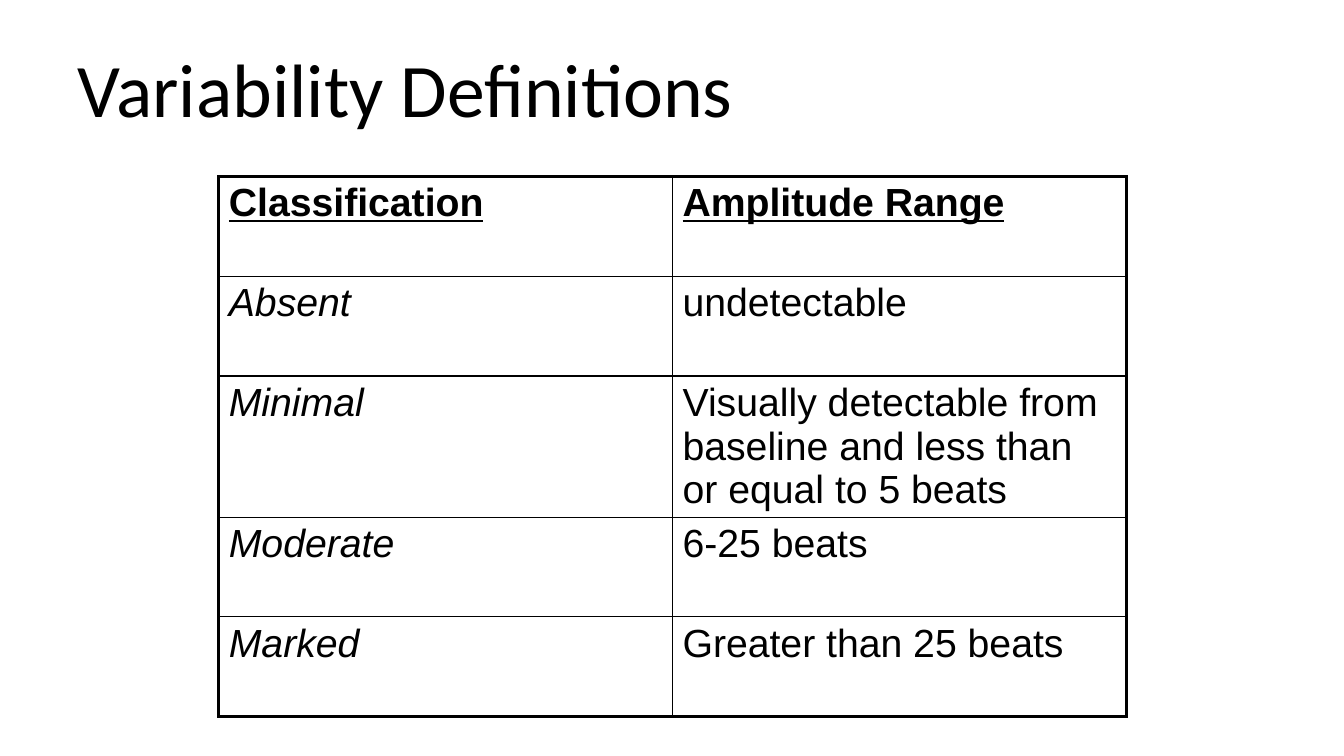
from lxml import etree
from pptx import Presentation
from pptx import util as u
from pptx.dml.color import RGBColor
from pptx.enum import text
from pptx.oxml.ns import qn

TITLE = "Variability Definitions"
DEFINITIONS = [
    ("Classification", "Amplitude Range"),
    ("Absent", "undetectable"),
    ("Minimal", "Visually detectable from baseline and less than or equal to 5 beats"),
    ("Moderate", "6-25 beats"),
    ("Marked", "Greater than 25 beats"),
]
BLACK = "000000"
TITLE_FONT = {"name": "Calibri", "size": u.Pt(54)}
BODY_FONT = {"name": "Arial", "size": u.Pt(28)}
HEADING = {"bold": True, "underline": True}
CLASS_NAME = {"bold": False, "italic": True}
AMPLITUDE = {"bold": False}
OUTER, INNER = 2.25, 1
COLUMN_WIDTH, ROW_HEIGHT = 4.5, 0.99


def color(hex_code):
    return RGBColor.from_string(hex_code)


def set_font(font, formats):
    for name, value in formats.items():
        setattr(font, name, value)
    font.color.rgb = color(BLACK)


def add_borders(cell, widths):
    """Draw cell borders from a dict of side letter to width in points."""
    properties = cell._tc.get_or_add_tcPr()
    for side, width in widths.items():
        line = etree.SubElement(properties, qn(f"a:ln{side}"), w=str(u.Pt(width)))
        fill = etree.SubElement(line, qn("a:solidFill"))
        etree.SubElement(fill, qn("a:srgbClr"), val=BLACK)


def add_title(slide):
    title = slide.shapes.title
    title.left, title.top = u.Inches(0.67), u.Inches(0.3)
    title.width, title.height = u.Inches(12), u.Inches(1.25)
    frame = title.text_frame
    frame.text = TITLE
    frame.vertical_anchor = text.MSO_ANCHOR.MIDDLE
    frame.auto_size = text.MSO_AUTO_SIZE.NONE
    paragraph = frame.paragraphs[0]
    paragraph.alignment = text.PP_ALIGN.LEFT
    paragraph.line_spacing = 0.9
    set_font(paragraph.runs[0].font, TITLE_FONT)


def add_definitions(slide):
    row_count, column_count = len(DEFINITIONS), len(DEFINITIONS[0])
    table = slide.shapes.add_table(
        row_count, column_count, u.Inches(2.17), u.Inches(1.75),
        u.Inches(COLUMN_WIDTH * column_count), u.Inches(ROW_HEIGHT * row_count),
    ).table
    table.horz_banding = False
    for r, definition in enumerate(DEFINITIONS):
        table.rows[r].height = u.Inches(ROW_HEIGHT)
        for c, wording in enumerate(definition):
            cell = table.cell(r, c)
            cell.text = wording
            style = HEADING if r == 0 else (CLASS_NAME, AMPLITUDE)[c]
            set_font(cell.text_frame.paragraphs[0].runs[0].font, BODY_FONT | style)
            on_edge = {"L": c == 0, "R": c == column_count - 1,
                       "T": r == 0, "B": r == row_count - 1}
            add_borders(cell, {side: OUTER if edge else INNER
                               for side, edge in on_edge.items()})
            cell.fill.background()


def main():
    deck = Presentation()
    deck.slide_width, deck.slide_height = u.Inches(13.33), u.Inches(7.5)
    slide = deck.slides.add_slide(deck.slide_layouts[5])
    add_title(slide)
    add_definitions(slide)
    deck.save("out.pptx")


if __name__ == "__main__":
    main()
